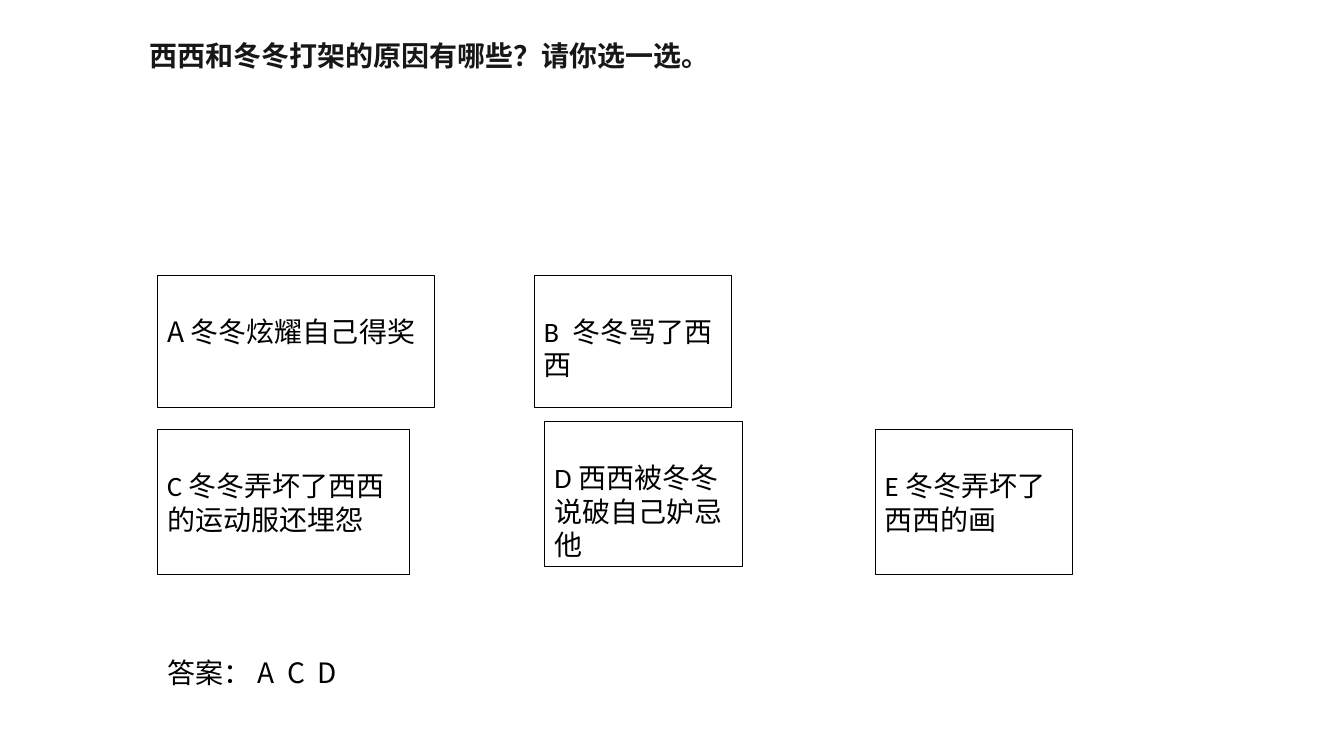
from dataclasses import dataclass

from pptx import Presentation
from pptx import util as u
from pptx.dml.color import RGBColor
from pptx.enum import shapes, text


@dataclass(frozen=True)
class Theme:
    ink: RGBColor = RGBColor(0x00, 0x00, 0x00)
    heading: RGBColor = RGBColor(0x18, 0x17, 0x17)
    paper: RGBColor = RGBColor(0xFF, 0xFF, 0xFF)
    body_font: str = "Calibri"
    letter_font: str = "Noto Sans CJK SC"
    size: u.Pt = u.Pt(20)
    border: u.Pt = u.Pt(0.5)


class QuizSlide:
    def __init__(self, slide, theme):
        self.slide = slide
        self.theme = theme

    def fill_text(self, frame, parts, color, bold=False):
        """Fill the first paragraph with (wording, font) parts."""
        frame.word_wrap = True
        paragraph = frame.paragraphs[0]
        paragraph.alignment = text.PP_ALIGN.LEFT
        paragraph.font.size = self.theme.size
        paragraph.font.bold = bold
        paragraph.font.color.rgb = color
        for wording, font in parts:
            run = paragraph.add_run()
            run.text = wording
            run.font.name = font
        return paragraph

    def text_box(self, place, parts, color, bold=False):
        box = self.slide.shapes.add_textbox(*map(u.Cm, place))
        return self.fill_text(box.text_frame, parts, color, bold)

    def question(self, place, wording):
        self.text_box(place, [(wording, self.theme.body_font)], self.theme.heading, bold=True)

    def option(self, place, parts):
        card = self.slide.shapes.add_shape(shapes.MSO_SHAPE.RECTANGLE, *map(u.Cm, place))
        card.shadow.inherit = False
        card.fill.solid()
        card.fill.fore_color.rgb = self.theme.paper
        card.line.color.rgb = self.theme.ink
        card.line.width = self.theme.border
        card.text_frame.vertical_anchor = text.MSO_ANCHOR.TOP
        card.text_frame.margin_top = u.Cm(0.99)
        self.fill_text(card.text_frame, parts, self.theme.ink)

    def answer(self, place, label, letters):
        parts = [(label, self.theme.body_font), (letters, self.theme.letter_font)]
        paragraph = self.text_box(place, parts, self.theme.ink)
        paragraph.alignment = text.PP_ALIGN.JUSTIFY
        paragraph.line_spacing = 1.5
        hanging = paragraph._p.get_or_add_pPr()
        hanging.set("marL", str(u.Cm(2.97)))
        hanging.set("indent", str(u.Cm(-2.11)))


def main():
    deck = Presentation()
    deck.slide_width, deck.slide_height = u.Cm(33.87), u.Cm(19.05)
    theme = Theme()
    quiz = QuizSlide(deck.slides.add_slide(deck.slide_layouts[6]), theme)

    quiz.question((3.51, 0.84, 26.85, 1.12), "西西和冬冬打架的原因有哪些？请你选一选。")

    first_left, narrow = 3.96, 4.98
    upper_top, upper_height = 6.93, 3.33
    lower_top, lower_height = 10.82, 3.66
    body, letter = theme.body_font, theme.letter_font
    options = [
        ((first_left, upper_top, 6.99, upper_height), [("A", letter), ("冬冬炫耀自己得奖", body)]),
        ((13.46, upper_top, narrow, upper_height), [("B 冬冬骂了西西", body)]),
        ((first_left, lower_top, 6.35, lower_height), [("C冬冬弄坏了西西的运动服还埋怨", body)]),
        ((13.72, 10.62, narrow, lower_height), [("D西西被冬冬说破自己妒忌他", body)]),
        ((22.05, lower_top, narrow, lower_height), [("E冬冬弄坏了西西的画", body)]),
    ]
    for place, parts in options:
        quiz.option(place, parts)

    quiz.answer((3.1, 15.98, 6.73, 1.4), "答案：", "A  C  D")
    deck.save("out.pptx")


if __name__ == "__main__":
    main()
